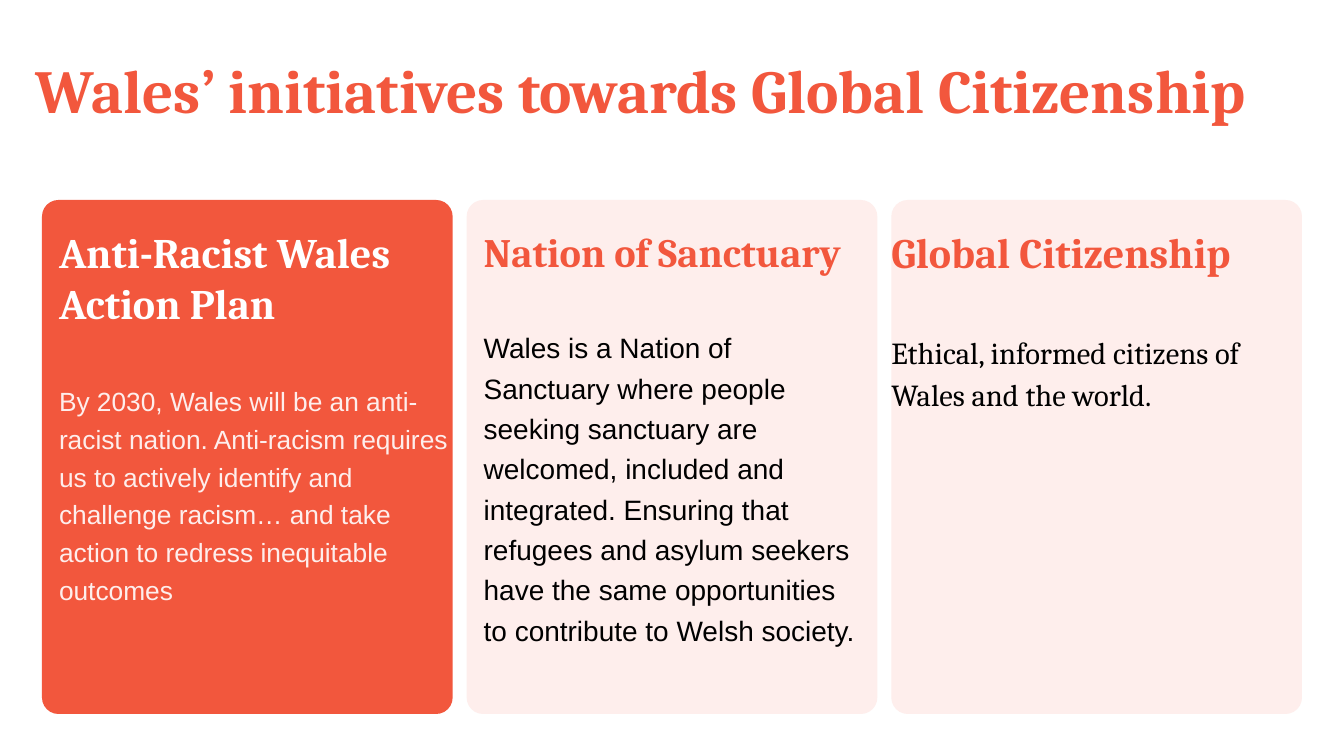
from pptx import Presentation
from pptx.dml.color import RGBColor
from pptx.enum.shapes import MSO_SHAPE
from pptx.enum.text import MSO_ANCHOR, MSO_AUTO_SIZE, PP_ALIGN
from pptx.util import Pt

SCALE = 14960
CORAL = RGBColor(0xF2, 0x57, 0x3D)
BLUSH = RGBColor(0xFE, 0xEE, 0xEC)
WHITE = RGBColor(0xFF, 0xFF, 0xFF)
BLACK = RGBColor(0x00, 0x00, 0x00)

TITLE = "Wales’ initiatives towards Global Citizenship"
CARDS = [
    dict(fill=CORAL, margins=(17, 0),
         heading=("Anti-Racist Wales Action Plan", "Cambria", 49.5, WHITE),
         body=("By 2030, Wales will be an anti-racist nation. Anti-racism requires "
               "us to actively identify and challenge racism… and take action to "
               "redress inequitable outcomes", "Arial", 31, BLUSH),
         spacing=1.2),
    dict(fill=BLUSH, margins=(17, 17),
         heading=("Nation of Sanctuary", "Cambria", 47.5, CORAL),
         body=("Wales is a Nation of Sanctuary where people seeking sanctuary are "
               "welcomed, included and integrated. Ensuring that refugees and asylum "
               "seekers have the same opportunities to contribute to Welsh society.",
               "Arial", 33, BLACK),
         spacing=1.2),
    dict(fill=BLUSH, margins=(0, 0),
         heading=("Global Citizenship", "Cambria", 49.5, CORAL),
         body=("Ethical, informed citizens of Wales and the world.",
               "Cambria", 36, BLACK),
         spacing=1.15),
]


def px(n):
    """Turn px into EMU."""
    return round(n * SCALE)


def place(sp, x, y, w, h):
    """Move a shape to the given box."""
    sp.left, sp.top, sp.width, sp.height = px(x), px(y), px(w), px(h)


def prepare_frame(tf):
    """Make a wrapping, top-anchored text frame without insets."""
    tf.word_wrap = True
    tf.auto_size = MSO_AUTO_SIZE.NONE
    tf.vertical_anchor = MSO_ANCHOR.TOP
    tf.margin_left = tf.margin_top = tf.margin_right = tf.margin_bottom = 0


def write(p, text, name, size, color, bold=False):
    """Fill a left-aligned paragraph and set its font."""
    p.text = text
    p.alignment = PP_ALIGN.LEFT
    p.font.name = name
    p.font.size = Pt(size)
    p.font.color.rgb = color
    p.font.bold = bold


def add_title(s, x, y, w, h):
    """Place and format the slide title."""
    sp = s.shapes.title
    place(sp, x, y, w, h)
    tf = sp.text_frame
    prepare_frame(tf)
    p = tf.paragraphs[0]
    write(p, TITLE, "Cambria", 72, CORAL, True)
    p.line_spacing = 0.96
    p.space_before = Pt(0)


def add_card(s, x, y, w, h, fill, margins, heading, body, spacing):
    """Draw one rounded card with its heading and body text."""
    sp = s.shapes.add_shape(MSO_SHAPE.ROUNDED_RECTANGLE, px(x), px(y), px(w), px(h))
    sp.adjustments[0] = 0.04
    sp.shadow.inherit = False
    sp.fill.solid()
    sp.fill.fore_color.rgb = fill
    sp.line.fill.background()

    left, right = margins
    tf = s.shapes.add_textbox(px(x + left), px(y + 27),
                              px(w - left - right), px(h - 54)).text_frame
    prepare_frame(tf)
    write(tf.paragraphs[0], *heading, bold=True)
    p = tf.add_paragraph()
    write(p, *body)
    p.space_before = Pt(heading[2] * 1.21)
    p.line_spacing = spacing


def add_cards(s, x, y, w, h, gap):
    """Spread the cards evenly across the box."""
    card_w = (w - gap * (len(CARDS) - 1)) / len(CARDS)
    for i, card in enumerate(CARDS):
        add_card(s, x + i * (card_w + gap), y, card_w, h, **card)


def main():
    """Build and save the slide."""
    prs = Presentation()
    prs.slide_width, prs.slide_height = px(1344), px(756)
    s = prs.slides.add_slide(prs.slide_layouts[5])
    add_title(s, 36, 57, 1272, 75)
    add_cards(s, 42, 200, 1260, 514, 14)
    prs.save("out.pptx")


if __name__ == "__main__":
    main()
